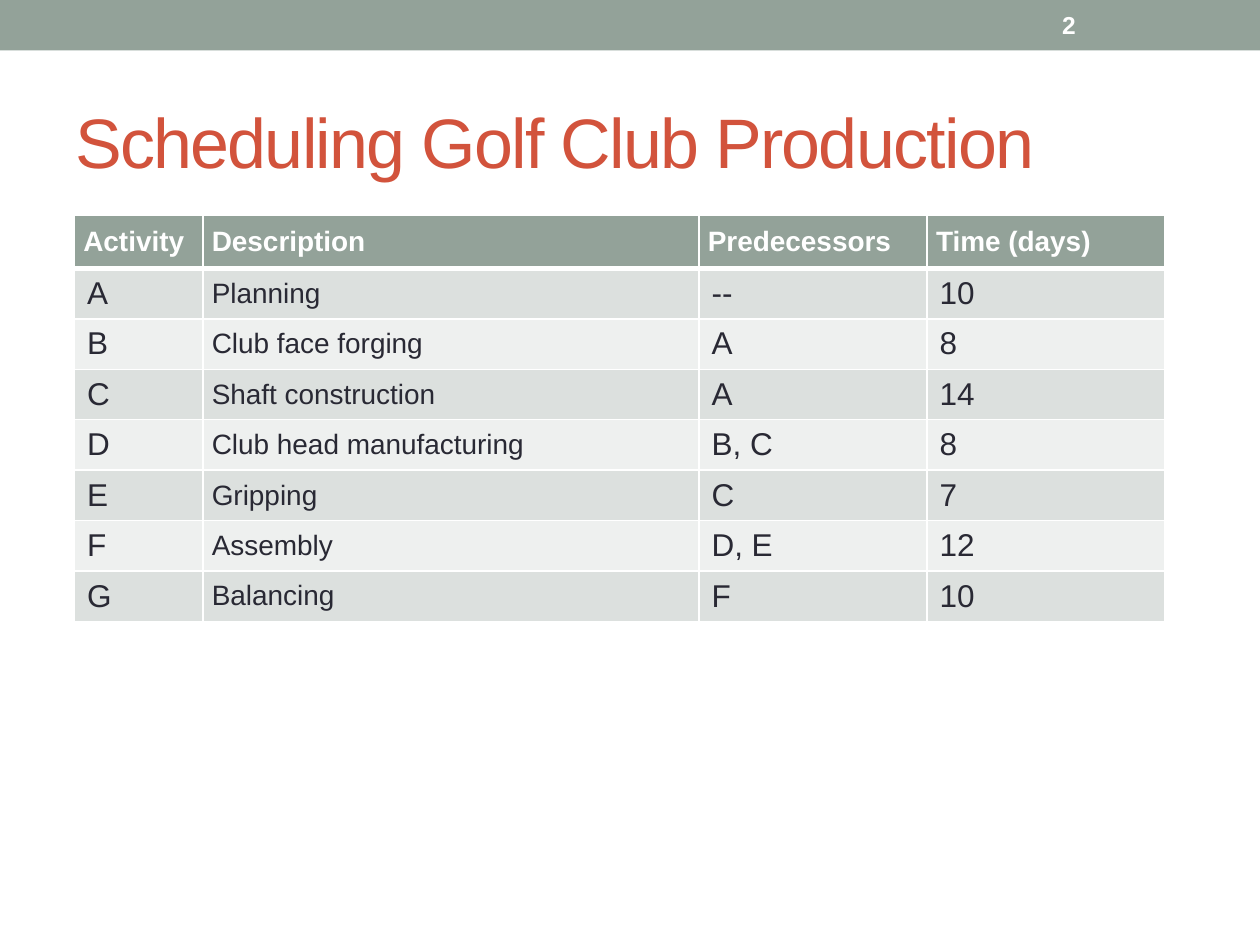
from lxml import etree
from pptx import Presentation
from pptx.dml.color import RGBColor
from pptx.enum import shapes, text
from pptx.oxml.ns import qn
from pptx.util import Cm, Pt

TITLE = "Scheduling Golf Club Production"
PAGE = "2"
HEADER = ("Activity", "Description", "Predecessors", "Time (days)")
ACTIVITIES = [
    ("A", "Planning", "--", "10"),
    ("B", "Club face forging", "A", "8"),
    ("C", "Shaft construction", "A", "14"),
    ("D", "Club head manufacturing", "B, C", "8"),
    ("E", "Gripping", "C", "7"),
    ("F", "Assembly", "D, E", "12"),
    ("G", "Balancing", "F", "10"),
]
COLORS = {"sage": "93A299", "title": "D2533C", "ink": "292934",
          "white": "FFFFFF", "dark_band": "DCE0DE", "light_band": "EEF0EF"}
COL_WIDTHS = (2.59, 10, 4.6, 4.8)
HEADER_HEIGHT, ROW_HEIGHT = 1.08, 0.97
DESCRIPTION = 1  # column with smaller text and tighter margins


def rgb(name):
    return RGBColor.from_string(COLORS[name])


def fill(obj, color):
    obj.fill.solid()
    obj.fill.fore_color.rgb = rgb(color)


def style(p, size, color, bold=False):
    p.font.name = "Arial"
    p.font.size = Pt(size)
    p.font.bold = bold
    p.font.color.rgb = rgb(color)


def add_text(slide, box, content, size, color, bold=False):
    sp = slide.shapes.add_textbox(*map(Cm, box))
    tf = sp.text_frame
    tf.word_wrap = True
    tf.vertical_anchor = text.MSO_ANCHOR.MIDDLE
    p = tf.paragraphs[0]
    r = p.add_run()
    r.text = content
    style(p, size, color, bold)
    return r


def set_borders(cell, bottom):
    tc_pr = cell._tc.get_or_add_tcPr()
    widths = {"lnL": 1, "lnR": 1, "lnT": 1, "lnB": bottom}
    for i, (tag, width) in enumerate(widths.items()):
        ln = etree.Element(qn(f"a:{tag}"), w=str(Pt(width)))
        solid = etree.SubElement(ln, qn("a:solidFill"))
        etree.SubElement(solid, qn("a:srgbClr"), val=COLORS["white"])
        tc_pr.insert(i, ln)


prs = Presentation()
prs.slide_width, prs.slide_height = Cm(25.4), Cm(19.05)
slide = prs.slides.add_slide(prs.slide_layouts[6])

# Top band
band = slide.shapes.add_shape(shapes.MSO_SHAPE.RECTANGLE, 0, 0,
                              prs.slide_width, Cm(1.02))
band.shadow.inherit = False
fill(band, "sage")
band.line.fill.background()

# Title with tightened letters, and page number
title = add_text(slide, (1.27, 1.47, 22.86, 2.74), TITLE, 40, "title")
title.font._element.set("spc", "-100")
add_text(slide, (21.16, 0.05, 2.97, 0.91), PAGE, 14, "white", True)

# Activity table
rows = [HEADER] + ACTIVITIES
height = HEADER_HEIGHT + ROW_HEIGHT * len(ACTIVITIES)
table = slide.shapes.add_table(len(rows), len(HEADER), Cm(1.5), Cm(4.33),
                               Cm(sum(COL_WIDTHS)), Cm(height)).table
for col, width in zip(table.columns, COL_WIDTHS):
    col.width = Cm(width)
for i, row in enumerate(rows):
    is_header = i == 0
    table.rows[i].height = Cm(HEADER_HEIGHT if is_header else ROW_HEIGHT)
    band_color = "sage" if is_header else "dark_band" if i % 2 else "light_band"
    for j, value in enumerate(row):
        cell = table.cell(i, j)
        cell.text = value
        cell.vertical_anchor = text.MSO_ANCHOR.MIDDLE
        compact = is_header or j == DESCRIPTION
        if compact:
            cell.margin_left = cell.margin_right = Cm(0.18)
            cell.margin_top = cell.margin_bottom = 0
        style(cell.text_frame.paragraphs[0], 16 if compact else 18,
              "white" if is_header else "ink", is_header)
        fill(cell, band_color)
        set_borders(cell, 3 if is_header else 1)

prs.save("out.pptx")
